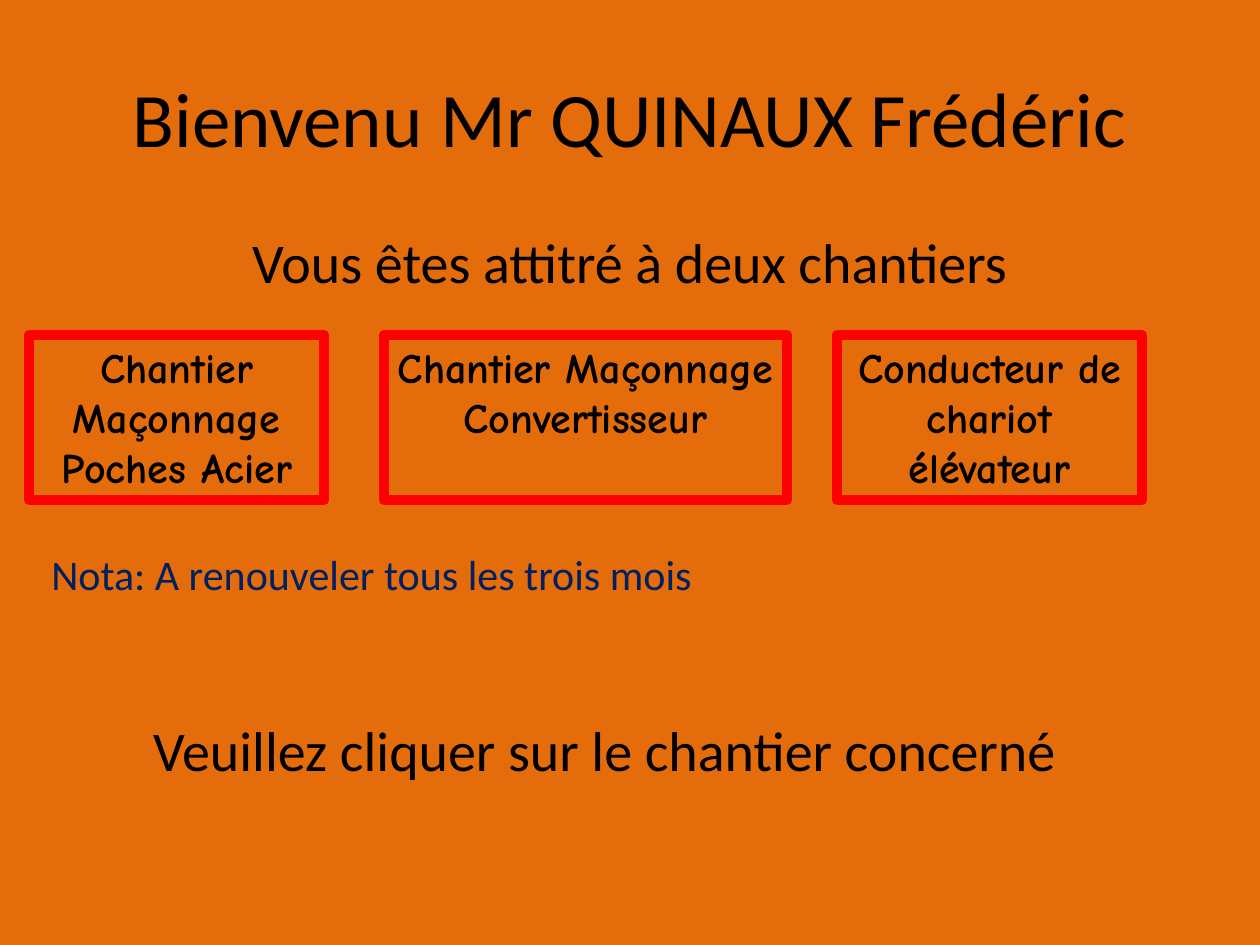
from pptx import Presentation
from pptx.dml.color import RGBColor as Rgb
from pptx.enum.text import MSO_ANCHOR as Anchor, PP_ALIGN as Align
from pptx.util import Pt

SCALE = 914400 / 126
HUES = {"back": "E46C0A", "text": "000000", "note": "002060", "edge": "FF0000"}
SITES = [
    (29, 295, "Chantier Maçonnage Poches Acier"),
    (384, 403, "Chantier Maçonnage Convertisseur"),
    (837, 305, "Conducteur de chariot élévateur"),
]


def px(n):
    return round(n * SCALE)


def hue(name):
    return Rgb.from_string(HUES[name])


def write(slide, text, area, size=32, font="Calibri", color="text", bold=False,
          align=Align.CENTER, anchor=Anchor.TOP):
    box = slide.shapes.add_textbox(*map(px, area))
    frame = box.text_frame
    frame.word_wrap = True
    frame.vertical_anchor = anchor
    para = frame.paragraphs[0]
    para.alignment = align
    run = para.add_run()
    run.text = text
    run.font.size = Pt(size)
    run.font.name = font
    run.font.bold = bold
    run.font.color.rgb = hue(color)
    return box


def add_site(slide, left, width, text):
    box = write(slide, text, (left, 335, width, 165), size=24, font="Comic Neue", bold=True)
    box.line.color.rgb = hue("edge")
    box.line.width = Pt(6)


def main():
    """Build the welcome slide with its three work sites."""
    deck = Presentation()
    deck.slide_width, deck.slide_height = px(1260), px(945)
    slide = deck.slides.add_slide(deck.slide_layouts[6])
    fill = slide.background.fill
    fill.solid()
    fill.fore_color.rgb = hue("back")

    write(slide, "Bienvenu Mr QUINAUX Frédéric", (63, 38, 1134, 157), size=44,
          anchor=Anchor.MIDDLE)
    write(slide, "Vous êtes attitré à deux chantiers", (63, 221, 1134, 105))
    for site in SITES:
        add_site(slide, *site)
    write(slide, "Nota: A renouveler tous les trois mois", (39, 542, 1103, 63), size=24,
          color="note", align=Align.LEFT)
    write(slide, "Veuillez cliquer sur le chantier concerné", (98, 709, 1014, 81))
    deck.save("out.pptx")


if __name__ == "__main__":
    main()
